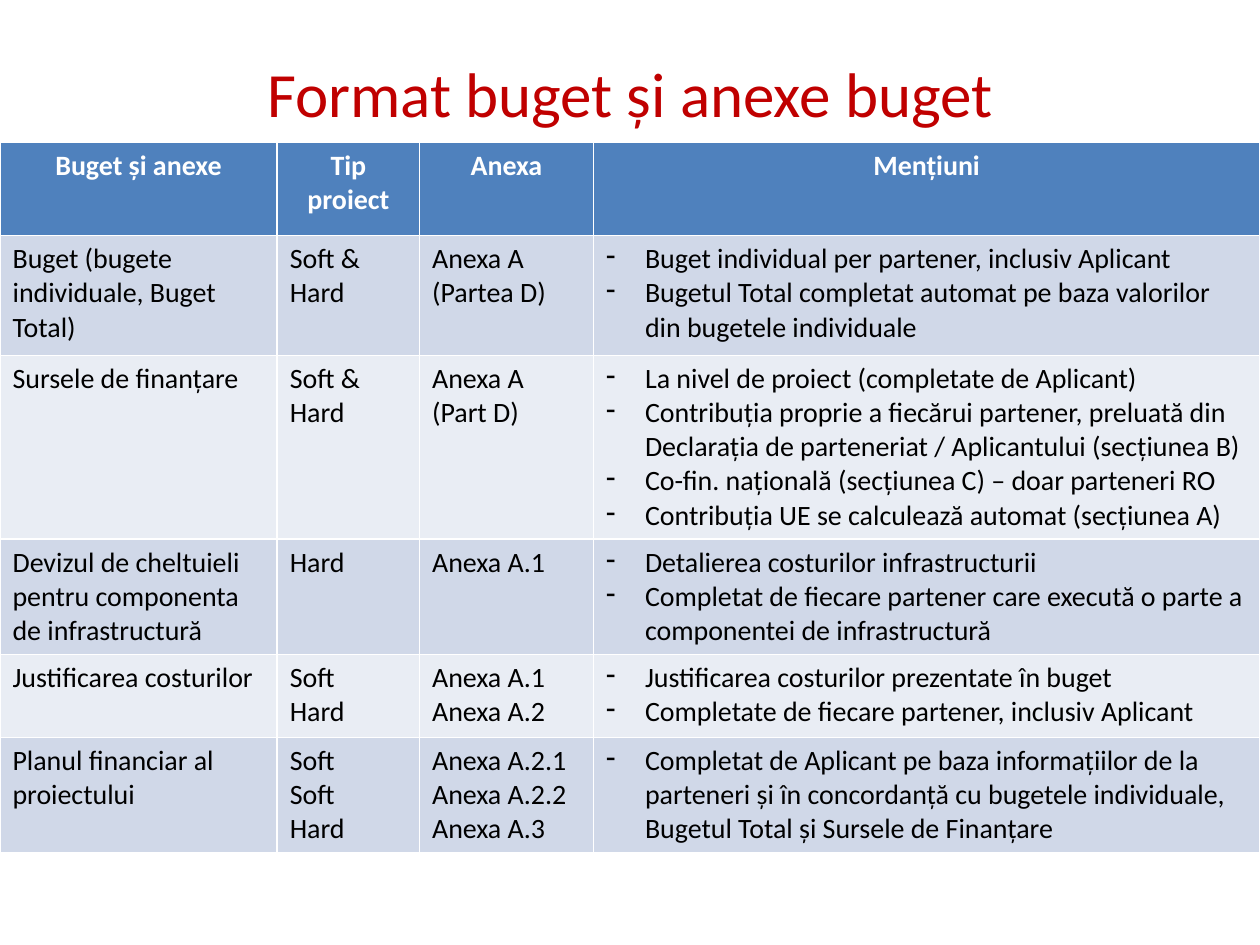
"""Build the slide on the budget format and its annexes."""
from dataclasses import dataclass

from lxml.etree import SubElement
from pptx import Presentation
from pptx.dml.color import RGBColor
from pptx.enum.text import MSO_ANCHOR, PP_ALIGN
from pptx.oxml.ns import qn
from pptx.slide import Slide
from pptx.util import Inches, Pt

RED = RGBColor(0xC0, 0x00, 0x00)
BLUE = RGBColor(0x4F, 0x81, 0xBD)
BAND_DARK = RGBColor(0xD0, 0xD8, 0xE8)
BAND_LIGHT = RGBColor(0xE9, 0xED, 0xF4)
WHITE = RGBColor(0xFF, 0xFF, 0xFF)
BLACK = RGBColor(0x00, 0x00, 0x00)

COLUMN_WIDTHS = [2.2, 1.13, 1.38, 5.29]
ROW_HEIGHTS = [0.74, 0.95, 1.45, 0.91, 0.66, 0.91]
HEADERS = ["Buget și anexe", "Tip proiect", "Anexa", "Mențiuni"]
BUDGET_ROWS = [
    ["Buget (bugete individuale, Buget Total)", "Soft & Hard", "Anexa A (Partea D)",
     "Buget individual per partener, inclusiv Aplicant\n"
     "Bugetul Total completat automat pe baza valorilor din bugetele individuale"],
    ["Sursele de finanțare", "Soft & Hard", "Anexa A (Part D)",
     "La nivel de proiect (completate de Aplicant)\n"
     "Contribuția proprie a fiecărui partener, preluată din Declarația de parteneriat"
     " / Aplicantului (secțiunea B)\n"
     "Co-fin. națională (secțiunea C) – doar parteneri RO\n"
     "Contribuția UE se calculează automat (secțiunea A)"],
    ["Devizul de cheltuieli pentru componenta de infrastructură", "Hard", "Anexa A.1",
     "Detalierea costurilor infrastructurii\n"
     "Completat de fiecare partener care execută o parte a componentei de infrastructură"],
    ["Justificarea costurilor", "Soft\nHard", "Anexa A.1\nAnexa A.2",
     "Justificarea costurilor prezentate în buget\n"
     "Completate de fiecare partener, inclusiv Aplicant"],
    ["Planul financiar al proiectului", "Soft\nSoft\nHard",
     "Anexa A.2.1\nAnexa A.2.2\nAnexa A.3",
     "Completat de Aplicant pe baza informațiilor de la parteneri și în concordanță"
     " cu bugetele individuale, Bugetul Total și Sursele de Finanțare"],
]


@dataclass
class SlideBuilder:
    """Hold the style and the current slide."""
    slide: Slide
    font_name: str = "Calibri"
    title_size: int = 36
    body_size: int = 16

    def style(self, paragraph, size, color, bold=False):
        """Set the font of a paragraph."""
        font = paragraph.font
        font.name, font.size, font.bold = self.font_name, Pt(size), bold
        font.color.rgb = color

    def add_dash(self, paragraph):
        """Give a paragraph a hanging dash."""
        properties = paragraph._p.get_or_add_pPr()
        properties.set("marL", str(Inches(0.31)))
        properties.set("indent", str(Inches(-0.31)))
        SubElement(properties, qn("a:buFontTx"))
        SubElement(properties, qn("a:buChar"), char="-")

    def add_title(self, text, left, top, width, height):
        """Fill and place the title placeholder."""
        title = self.slide.shapes.title
        title.left, title.top = Inches(left), Inches(top)
        title.width, title.height = Inches(width), Inches(height)
        title.text_frame.text = text
        title.text_frame.vertical_anchor = MSO_ANCHOR.MIDDLE
        paragraph = title.text_frame.paragraphs[0]
        paragraph.alignment = PP_ALIGN.CENTER
        self.style(paragraph, self.title_size, RED)

    def fill_cell(self, cell, text, fill, header=False, dashed=False):
        """Write and format one table cell."""
        cell.fill.solid()
        cell.fill.fore_color.rgb = fill
        cell.text = text
        for paragraph in cell.text_frame.paragraphs:
            paragraph.alignment = PP_ALIGN.CENTER if header else PP_ALIGN.LEFT
            if dashed:
                self.add_dash(paragraph)
            self.style(paragraph, self.body_size, WHITE if header else BLACK, header)

    def add_table(self, rows, left, top, column_widths, row_heights):
        """Add a banded table whose last column is a dashed list."""
        table = self.slide.shapes.add_table(
            len(rows), len(column_widths), Inches(left), Inches(top),
            Inches(sum(column_widths)), Inches(sum(row_heights))).table
        for column, width in zip(table.columns, column_widths):
            column.width = Inches(width)
        for row, height in zip(table.rows, row_heights):
            row.height = Inches(height)
        last_column = len(column_widths) - 1
        for row_index, texts in enumerate(rows):
            header = row_index == 0
            band = BAND_DARK if row_index % 2 else BAND_LIGHT
            for column_index, text in enumerate(texts):
                self.fill_cell(table.cell(row_index, column_index), text,
                               BLUE if header else band, header,
                               not header and column_index == last_column)


def main():
    """Build and save the presentation."""
    presentation = Presentation()
    presentation.slide_width, presentation.slide_height = Inches(10), Inches(7.5)
    builder = SlideBuilder(presentation.slides.add_slide(presentation.slide_layouts[5]))
    builder.add_title("Format buget și anexe buget", 0.5, 0.3, 9, 0.87)
    builder.add_table([HEADERS, *BUDGET_ROWS], 0, 1.13, COLUMN_WIDTHS, ROW_HEIGHTS)
    presentation.save("out.pptx")


if __name__ == "__main__":
    main()
